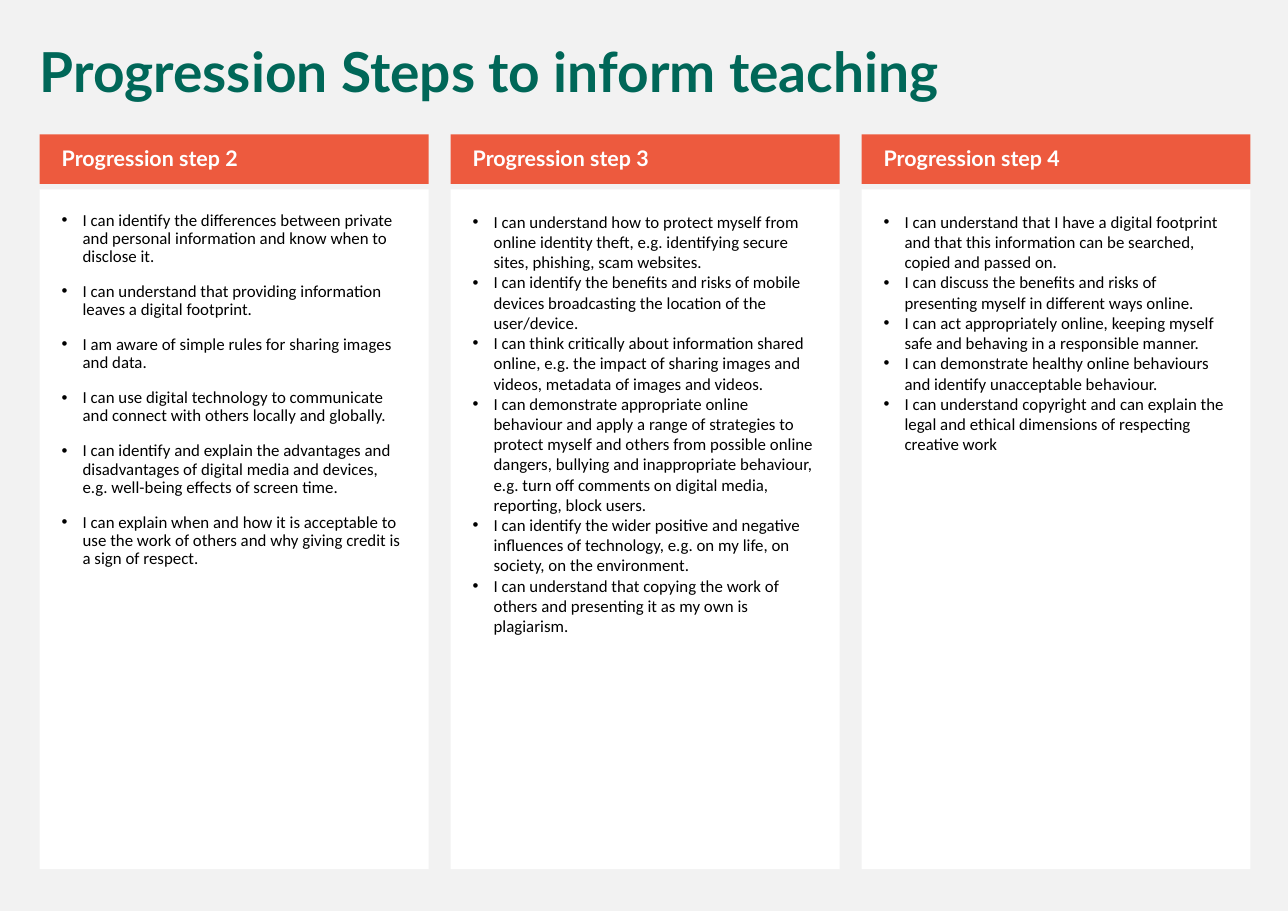
from copy import deepcopy
from dataclasses import dataclass

from pptx import Presentation
from pptx import util as u
from pptx.dml.color import RGBColor
from pptx.enum import text
from pptx.oxml.xmlchemy import OxmlElement


@dataclass(frozen=True)
class Theme:
    page: str = "F2F2F2"
    card: str = "FFFFFF"
    band: str = "ED5A3E"
    title: str = "006758"
    band_text: str = "FFFFFF"
    body_text: str = "000000"
    heading_font: str = "Lato"
    body_font: str = "Calibri"
    title_size: int = 36
    band_size: int = 14
    body_size: int = 11


theme = Theme()

# Heading, line spacing, space before in points, statements
STEPS = [
    ("Progression step 2", 0.9, 11, [
        "I can identify the differences between private and personal information and know when to disclose it.",
        "I can understand that providing information leaves a digital footprint.",
        "I am aware of simple rules for sharing images and data.",
        "I can use digital technology to communicate and connect with others locally and globally.",
        "I can identify and explain the advantages and disadvantages of digital media and devices, e.g. well-being effects of screen time.",
        "I can explain when and how it is acceptable to use the work of others and why giving credit is a sign of respect.",
    ]),
    ("Progression step 3", 1.0, 0, [
        "I can understand how to protect myself from online identity theft, e.g. identifying secure sites, phishing, scam websites.",
        "I can identify the benefits and risks of mobile devices broadcasting the location of the user/device.",
        "I can think critically about information shared online, e.g. the impact of sharing images and videos, metadata of images and videos.",
        "I can demonstrate appropriate online behaviour and apply a range of strategies to protect myself and others from possible online dangers, bullying and inappropriate behaviour, e.g. turn off comments on digital media, reporting, block users.",
        "I can identify the wider positive and negative influences of technology, e.g. on my life, on society, on the environment.",
        "I can understand that copying the work of others and presenting it as my own is plagiarism.",
    ]),
    ("Progression step 4", 1.0, 0, [
        "I can understand that I have a digital footprint and that this information can be searched, copied and passed on.",
        "I can discuss the benefits and risks of presenting myself in different ways online.",
        "I can act appropriately online, keeping myself safe and behaving in a responsible manner.",
        "I can demonstrate healthy online behaviours and identify unacceptable behaviour.",
        "I can understand copyright and can explain the legal and ethical dimensions of respecting creative work",
    ]),
]

WIDTH, HEIGHT = 11.69, 8.27
MARGIN, COLUMN, GAP = 0.36, 3.53, 0.2
BAND_TOP, BAND_HEIGHT = 1.22, 0.45
CARD_TOP, CARD_HEIGHT = 1.72, 6.17
INDENT = 0.19


def place(holder, box, insets, anchor, fill=None):
    """Set a placeholder's box, text insets (left, top, right, bottom) and fill."""
    holder.left, holder.top, holder.width, holder.height = map(u.Inches, box)
    frame = holder.text_frame
    frame.auto_size = text.MSO_AUTO_SIZE.NONE
    frame.word_wrap = True
    frame.vertical_anchor = anchor
    (frame.margin_left, frame.margin_top,
     frame.margin_right, frame.margin_bottom) = map(u.Inches, insets)
    if fill:
        holder.fill.solid()
        holder.fill.fore_color.rgb = RGBColor.from_string(fill)


def write(holder, lines, font, size, color, bold=False, bullet=False, spacing=0.9, before=11):
    """Fill a placeholder with formatted paragraphs, bulleted or plain."""
    holder.text_frame.text = "\n".join(lines)
    for paragraph in holder.text_frame.paragraphs:
        paragraph.alignment = text.PP_ALIGN.LEFT
        paragraph.line_spacing = spacing
        paragraph.space_before = u.Pt(before)
        properties = paragraph._p.get_or_add_pPr()
        indent = u.Inches(INDENT) if bullet else 0
        properties.set("marL", str(indent))
        properties.set("indent", str(-indent))
        mark = OxmlElement("a:buChar" if bullet else "a:buNone")
        if bullet:
            mark.set("char", "•")
        properties.append(mark)
        for run in paragraph.runs:
            run.font.name = font
            run.font.size = u.Pt(size)
            run.font.bold = bold
            run.font.color.rgb = RGBColor.from_string(color)


deck = Presentation()
deck.slide_width, deck.slide_height = u.Inches(WIDTH), u.Inches(HEIGHT)

# Extend the title-and-content layout to a heading and a list per step
layout = deck.slide_layouts[1]
content = layout.placeholders[1].element
for number in range(20, 20 + 2 * len(STEPS) - 1):
    extra = deepcopy(content)
    extra.xpath(".//p:cNvPr")[0].set("id", str(number))
    extra.xpath(".//p:ph")[0].set("idx", str(number))
    content.getparent().append(extra)

slide = deck.slides.add_slide(layout)
slide.background.fill.solid()
slide.background.fill.fore_color.rgb = RGBColor.from_string(theme.page)

title = slide.shapes.title
place(title, (MARGIN - 0.1, 0.36, WIDTH - 2 * MARGIN + 0.1, 0.65),
      (0.1, 0.05, 0.1, 0.05), text.MSO_ANCHOR.TOP)
write(title, ["Progression Steps to inform teaching"],
      theme.heading_font, theme.title_size, theme.title, bold=True)

bodies = [holder for holder in slide.placeholders if holder.placeholder_format.idx > 0]
for column, (heading, spacing, before, statements) in enumerate(STEPS):
    left = MARGIN + column * (COLUMN + GAP)
    card, band = bodies[2 * column:2 * column + 2]
    place(card, (left, CARD_TOP, COLUMN, CARD_HEIGHT),
          (0.2, 0.2, 0.2, 0.2), text.MSO_ANCHOR.TOP, theme.card)
    write(card, statements, theme.body_font, theme.body_size, theme.body_text,
          bullet=True, spacing=spacing, before=before)
    place(band, (left, BAND_TOP, COLUMN, BAND_HEIGHT),
          (0.2, 0.05, 0.1, 0.05), text.MSO_ANCHOR.MIDDLE, theme.band)
    write(band, [heading], theme.heading_font, theme.band_size, theme.band_text, bold=True)

deck.save("out.pptx")
